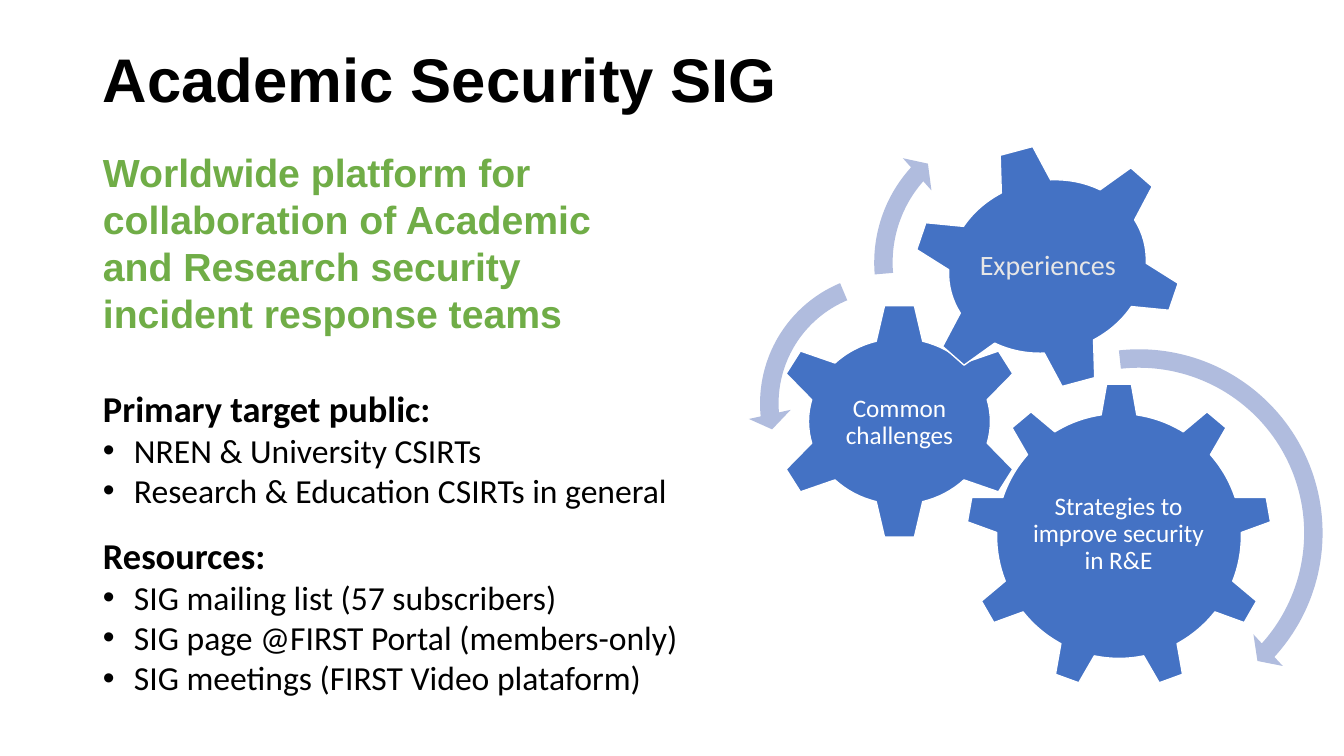
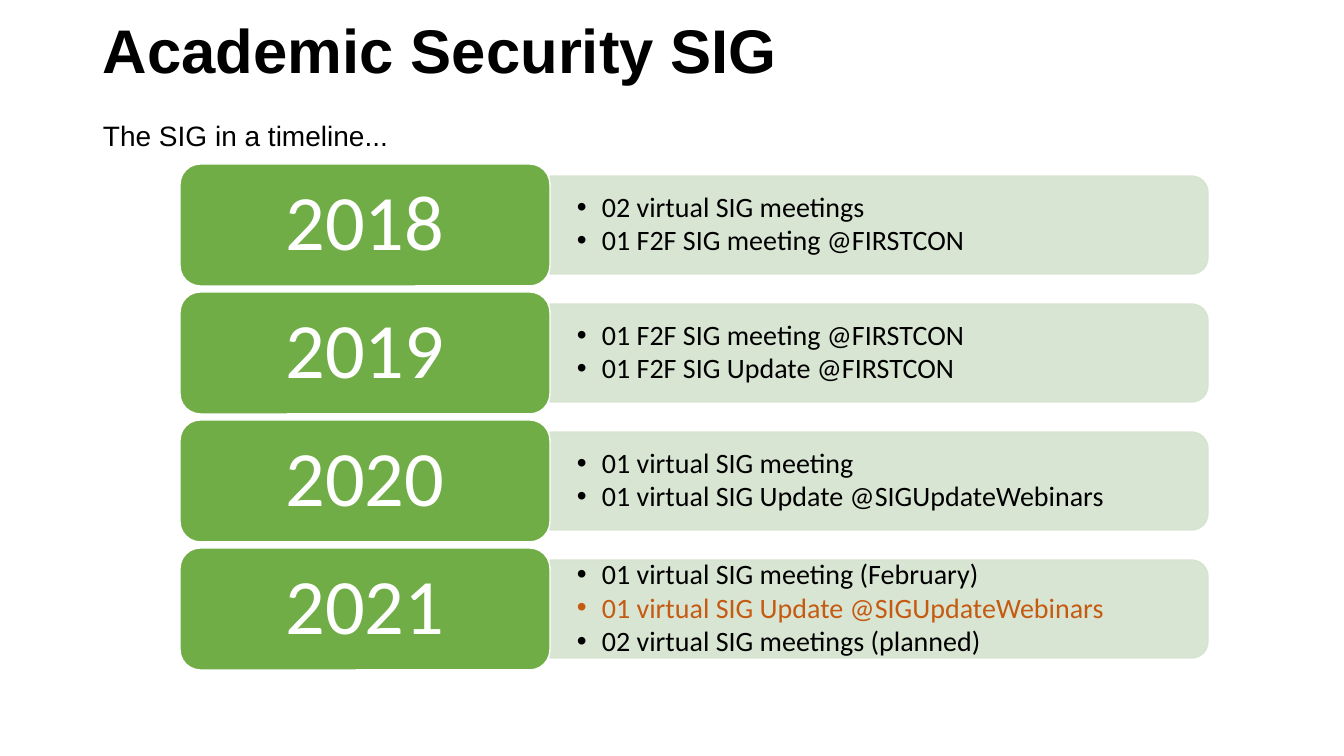
from dataclasses import dataclass
from typing import NamedTuple

from lxml import etree
from pptx import Presentation
from pptx import util as u
from pptx.dml.color import RGBColor
from pptx.enum import shapes, text
from pptx.oxml.ns import qn

EMU_PER_PX = 914400 / 100.8
BLACK, WHITE, PALE_GREY = "000000", "FFFFFF", "E7E6E6"
GREEN, PALE_GREEN, ORANGE = "70AD47", "D5E3CF", "C55A11"
BLUE, PALE_BLUE = "4472C4", "B0BCDE"
HEADING_FONT, BODY_FONT = "Arial", "Calibri"
Shape = shapes.MSO_SHAPE


class Box(NamedTuple):
    left: int
    top: int
    width: int
    height: int


@dataclass(frozen=True)
class Line:
    wording: str
    size: int
    color: str = BLACK
    font: str = BODY_FONT
    bold: bool = False
    centered: bool = False
    indent: int = 0
    spacing: float = 1
    after: float = 0


@dataclass(frozen=True)
class Gear:
    kind: Shape
    box: Box
    label: Line
    label_box: Box
    rotation: int = 0


@dataclass(frozen=True)
class TurnArrow:
    kind: Shape
    box: Box
    adjustments: tuple[int, ...]


@dataclass(frozen=True)
class Topic:
    heading: str
    points: tuple[str, ...]
    box: Box


@dataclass(frozen=True)
class Year:
    name: str
    events: tuple[str, ...]
    highlighted: str = ""


def px(length: float) -> u.Emu:
    return u.Emu(round(length * EMU_PER_PX))


def rgb(color: str) -> RGBColor:
    return RGBColor.from_string(color)


def write(frame, lines: list[Line], inset: tuple[int, int] = (10, 5), middle: bool = False) -> None:
    frame.word_wrap = True
    frame.auto_size = text.MSO_AUTO_SIZE.NONE
    frame.vertical_anchor = text.MSO_ANCHOR.MIDDLE if middle else text.MSO_ANCHOR.TOP
    frame.margin_left = frame.margin_right = px(inset[0])
    frame.margin_top = frame.margin_bottom = px(inset[1])
    for index, line in enumerate(lines):
        paragraph = frame.add_paragraph() if index else frame.paragraphs[0]
        paragraph.text = line.wording
        paragraph.alignment = text.PP_ALIGN.CENTER if line.centered else text.PP_ALIGN.LEFT
        if line.indent:
            properties = paragraph._p.get_or_add_pPr()
            properties.set("marL", str(px(line.indent)))
            properties.set("indent", str(-px(line.indent)))
            etree.SubElement(properties, qn("a:buFont"), typeface="Arial")
            etree.SubElement(properties, qn("a:buChar"), char="•")
        paragraph.line_spacing = line.spacing
        paragraph.space_after = u.Pt(line.after)
        font = paragraph.font
        font.name, font.size, font.bold = line.font, u.Pt(line.size), line.bold
        font.color.rgb = rgb(line.color)


def add_text(slide, box: Box, lines: list[Line], inset: tuple[int, int] = (10, 5), middle: bool = False) -> None:
    write(slide.shapes.add_textbox(*map(px, box)).text_frame, lines, inset, middle)


def add_figure(slide, kind: Shape, box: Box, fill: str, outline: str = ""):
    figure = slide.shapes.add_shape(kind, *map(px, box))
    figure.shadow.inherit = False
    figure.fill.solid()
    figure.fill.fore_color.rgb = rgb(fill)
    if outline:
        figure.line.color.rgb = rgb(outline)
        figure.line.width = u.Pt(1)
    else:
        figure.line.fill.background()
    return figure


def add_titled_slide(deck, title_box: Box):
    slide = deck.slides.add_slide(deck.slide_layouts[5])
    title = slide.shapes.title
    title.left, title.top, title.width, title.height = map(px, title_box)
    heading = Line("Academic Security SIG", 44, font=HEADING_FONT, bold=True, spacing=0.9)
    write(title.text_frame, [heading], middle=True)
    return slide


def add_gear(slide, gear: Gear) -> None:
    wheel = add_figure(slide, gear.kind, gear.box, BLUE, WHITE)
    wheel.rotation = gear.rotation
    add_text(slide, gear.label_box, [gear.label], (3, 3), middle=True)


def add_turn_arrow(slide, arrow: TurnArrow) -> None:
    figure = add_figure(slide, arrow.kind, arrow.box, PALE_BLUE)
    for index, value in enumerate(arrow.adjustments):
        figure.adjustments[index] = value / 100000


def add_topic(slide, topic: Topic) -> None:
    points = [Line(point, 24, indent=31) for point in topic.points]
    add_text(slide, topic.box, [Line(topic.heading, 26, bold=True), *points])


def add_year(slide, year: Year, top: int) -> None:
    band = Box(550, top + 12, 658, 98)
    shift = (band.width - band.height) // 2
    upright = Box(band.left + shift, band.top - shift, band.height, band.width)
    panel = add_figure(slide, Shape.ROUND_2_SAME_RECTANGLE, upright, PALE_GREEN, PALE_GREEN)
    panel.rotation = 90
    for color in panel._element.spPr.iter(qn("a:srgbClr")):
        etree.SubElement(color, qn("a:alpha"), val="90000")
    events = [
        Line(event, 20, ORANGE if event == year.highlighted else BLACK, indent=25, spacing=0.9, after=2.5)
        for event in year.events
    ]
    add_text(slide, band, events, (27, 14), middle=True)
    card = add_figure(slide, Shape.ROUNDED_RECTANGLE, Box(180, top, 370, 122), GREEN, WHITE)
    write(card.text_frame, [Line(year.name, 56, WHITE, centered=True, spacing=0.9)], (29, 18), middle=True)


def gear_label(wording: str, size: int = 18, color: str = WHITE) -> Line:
    return Line(wording, size, color, centered=True, spacing=0.9)


GEARS = (
    Gear(Shape.GEAR_9, Box(966, 383, 306, 306),
         gear_label("Strategies to improve security in R&E"), Box(1027, 456, 183, 157)),
    Gear(Shape.GEAR_6, Box(773, 303, 253, 237),
         gear_label("Common challenges"), Box(835, 364, 129, 117)),
    Gear(Shape.GEAR_6, Box(911, 144, 273, 245),
         gear_label("Experiences", 20, PALE_GREY), Box(973, 196, 150, 141), 345),
)
TURN_ARROWS = (
    TurnArrow(Shape.CIRCULAR_ARROW, Box(943, 337, 392, 392), (4700, 299000, 2533500, 15824400, 5500)),
    TurnArrow(Shape.LEFT_CIRCULAR_ARROW, Box(748, 261, 285, 285), (6500, 430000, 10489100, 14837800, 7500)),
    TurnArrow(Shape.CIRCULAR_ARROW, Box(862, 109, 307, 307), (6000, 394100, 13313800, 10508200, 7000)),
)
TOPICS = (
    Topic("Primary target public:",
          ("NREN & University CSIRTs", "Research & Education CSIRTs in general"),
          Box(93, 381, 672, 136)),
    Topic("Resources:",
          ("SIG mailing list (57 subscribers)", "SIG page @FIRST Portal (members-only)",
           "SIG meetings (FIRST Video plataform)"),
          Box(93, 528, 672, 176)),
)
F2F_MEETING = "01 F2F SIG meeting @FIRSTCON"
WEBINAR_UPDATE = "01 virtual SIG Update @SIGUpdateWebinars"
YEARS = (
    Year("2018", ("02 virtual SIG meetings", F2F_MEETING)),
    Year("2019", (F2F_MEETING, "01 F2F SIG Update @FIRSTCON")),
    Year("2020", ("01 virtual SIG meeting", WEBINAR_UPDATE)),
    Year("2021", ("01 virtual SIG meeting (February)", WEBINAR_UPDATE,
                  "02 virtual SIG meetings (planned)"), WEBINAR_UPDATE),
)
FIRST_YEAR_TOP, YEAR_PITCH = 164, 128


def build_overview(deck) -> None:
    slide = add_titled_slide(deck, Box(93, 23, 1159, 120))
    mission = "Worldwide platform for collaboration of Academic and Research security incident response teams"
    add_text(slide, Box(93, 143, 514, 201), [Line(mission, 28, GREEN, HEADING_FONT, bold=True)])
    for gear in GEARS:
        add_gear(slide, gear)
    for arrow in TURN_ARROWS:
        add_turn_arrow(slide, arrow)
    for topic in TOPICS:
        add_topic(slide, topic)


def build_timeline(deck) -> None:
    slide = add_titled_slide(deck, Box(93, -28, 1159, 163))
    add_text(slide, Box(93, 113, 1051, 44), [Line("The SIG in a timeline...", 20, font=HEADING_FONT)])
    for index, year in enumerate(YEARS):
        add_year(slide, year, FIRST_YEAR_TOP + index * YEAR_PITCH)


def main() -> None:
    deck = Presentation()
    deck.slide_width, deck.slide_height = px(1344), px(756)
    build_overview(deck)
    build_timeline(deck)
    deck.save("out.pptx")


if __name__ == "__main__":
    main()
